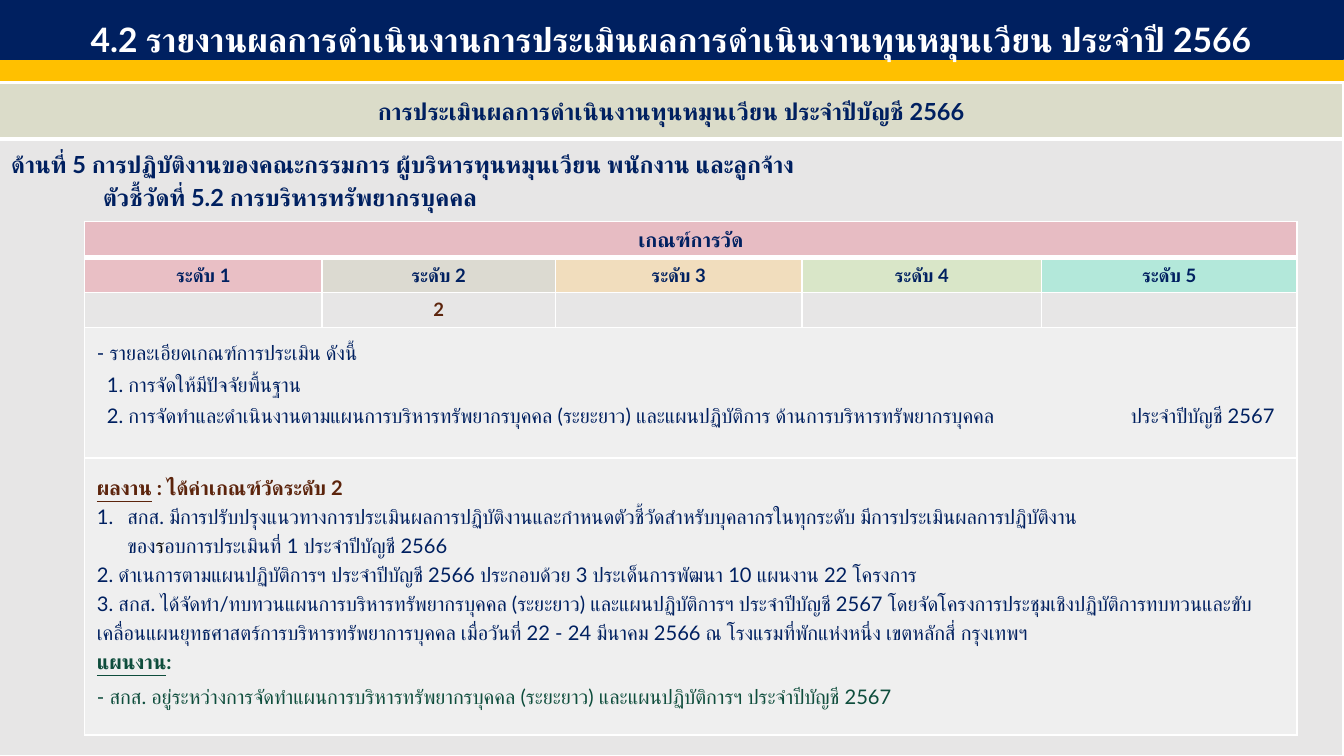
from lxml import etree
from pptx import Presentation
from pptx.dml.color import RGBColor
from pptx.enum import shapes, text
from pptx.oxml import ns
from pptx.util import Cm, Pt

FONT = "Lato"
NAVY = RGBColor(0x00, 0x20, 0x60)
GOLD = RGBColor(0xFF, 0xC0, 0x00)
WHITE = RGBColor(0xFF, 0xFF, 0xFF)
BLACK = RGBColor(0x00, 0x00, 0x00)
BROWN = RGBColor(0x5C, 0x24, 0x0C)
GREEN = RGBColor(0x0E, 0x4D, 0x3C)
SAGE = RGBColor(0xDB, 0xDC, 0xC9)
GREY = RGBColor(0xE7, 0xE6, 0xE6)
PALE = RGBColor(0xF2, 0xF2, 0xF2)
PINK = RGBColor(0xE8, 0xAB, 0xB5)
LEVEL_COLORS = [
    RGBColor(0xEB, 0xA5, 0xAF), RGBColor(0xD6, 0xD2, 0xC4), RGBColor(0xF9, 0xD8, 0xA3),
    RGBColor(0xD1, 0xE6, 0xB5), RGBColor(0x91, 0xEA, 0xD2),
]

TITLE = "4.2 รายงานผลการดำเนินงานการประเมินผลการดำเนินงานทุนหมุนเวียน ประจำปี 2566"
SUBTITLE = "การประเมินผลการดำเนินงานทุนหมุนเวียน ประจำปีบัญชี 2566"
ASPECT = "ด้านที่ 5 การปฏิบัติงานของคณะกรรมการ ผู้บริหารทุนหมุนเวียน พนักงาน และลูกจ้าง"
INDICATOR = "ตัวชี้วัดที่ 5.2 การบริหารทรัพยากรบุคคล"
CRITERIA_HEADING = "เกณฑ์การวัด"
LEVELS = [f"ระดับ {level}" for level in range(1, 6)]
SCORE = 2

# Each paragraph: its runs as (text, run format), then its paragraph format.
CRITERIA = [
    ([("- รายละเอียดเกณฑ์การประเมิน ดังนี้", {})], {"spacing": 1.3}),
    ([("1. การจัดให้มีปัจจัยพื้นฐาน", {})], {"spacing": 1.3, "left": 0.21}),
    ([("2. การจัดทำและดำเนินงานตามแผนการบริหารทรัพยากรบุคคล (ระยะยาว) และแผนปฏิบัติการ "
       "ด้านการบริหารทรัพยากรบุคคล\tประจำปีบัญชี 2567", {})],
     {"spacing": 1.3, "left": 0.21, "tab": 21.5}),
]
RESULTS = [
    ([("ผลงาน", {"color": BROWN, "bold": True, "underline": True}),
      (" : ได้ค่าเกณฑ์วัดระดับ 2", {"color": BROWN, "bold": True})], {"spacing": 1.5}),
    ([("สกส. มีการปรับปรุงแนวทางการประเมินผลการปฏิบัติงานและกำหนดตัวชี้วัดสำหรับบุคลากรในทุกระดับ "
       "มีการประเมินผลการปฏิบัติงาน\nของ", {}),
      ("ร", {"color": BLACK}),
      ("อบการประเมินที่ 1 ประจำปีบัญชี 2566", {})],
     {"spacing": 1.2, "left": 0.64, "numbered": True}),
    ([("2. ดำเนการตามแผนปฏิบัติการฯ ประจำปีบัญชี 2566 ประกอบด้วย 3 ประเด็นการพัฒนา "
       "10 แผนงาน 22 โครงการ", {})], {"spacing": 1.2}),
    ([("3. สกส. ได้จัดทำ/ทบทวนแผนการบริหารทรัพยากรบุคคล (ระยะยาว) และแผนปฏิบัติการฯ "
       "ประจำปีบัญชี 2567 โดยจัดโครงการประชุมเชิงปฏิบัติการทบทวนและขับเคลื่อนแผนยุทธศาสตร์"
       "การบริหารทรัพยาการบุคคล เมื่อวันที่ 22 - 24 มีนาคม 2566 ณ โรงแรมที่พักแห่งหนึ่ง "
       "เขตหลักสี่ กรุงเทพฯ", {})], {"spacing": 1.2}),
    ([("แผนงาน", {"color": GREEN, "bold": True, "underline": True}),
      (":", {"color": GREEN, "bold": True})], {"spacing": 1.2}),
    ([("- สกส. อยู่ระหว่างการจัดทำแผนการบริหารทรัพยากรบุคคล (ระยะยาว) และแผนปฏิบัติการฯ "
       "ประจำปีบัญชี 2567", {"color": GREEN})], {"before": 6}),
]

SLIDE_WIDTH, SLIDE_HEIGHT = 28.22, 15.88
FRAME_ROWS = [1.17, 12.95]
CRITERIA_COLUMNS = [4.98, 4.9, 5.18, 5.03, 5.36]
CRITERIA_ROWS = [0.74, 0.69, 0.74, 2.74, 5.82]


def add_xml(parent, tag, **attributes):
    return etree.SubElement(parent, ns.qn(tag), attributes)


def format_run(run, size, color=NAVY, bold=False, underline=False):
    font = run.font
    font.size, font.bold, font.name = Pt(size), bold, FONT
    font.color.rgb = color
    if underline:
        font.underline = True
    add_xml(font._element, "a:cs", typeface=FONT)


def write(frame, content, size=12, align=None, spacing=None, **run_format):
    """Fill a text frame with one string or with a list of (runs, paragraph format)."""
    if isinstance(content, str):
        content = [([(content, {})], {})]
    for index, (runs, layout) in enumerate(content):
        paragraph = frame.add_paragraph() if index else frame.paragraphs[0]
        properties = paragraph._p.get_or_add_pPr()
        if "left" in layout:
            properties.set("marL", str(Cm(layout["left"])))
        if "numbered" in layout:
            properties.set("indent", str(-Cm(layout["left"])))
            add_xml(properties, "a:buFont", typeface="+mj-lt")
            add_xml(properties, "a:buAutoNum", type="arabicPeriod")
        if "tab" in layout:
            tabs = add_xml(properties, "a:tabLst")
            add_xml(tabs, "a:tab", pos=str(Cm(layout["tab"])), algn="l")
        paragraph.alignment = align
        paragraph.line_spacing = layout.get("spacing", spacing)
        if "before" in layout:
            paragraph.space_before = Pt(layout["before"])
        if "after" in layout:
            paragraph.space_after = Pt(layout["after"])
        for words, own_format in runs:
            for number, line in enumerate(words.split("\n")):
                if number:
                    paragraph.add_line_break()
                run = paragraph.add_run()
                run.text = line
                format_run(run, size, **{**run_format, **own_format})


def add_bar(slide, left, top, width, height, color):
    bar = slide.shapes.add_shape(
        shapes.MSO_SHAPE.RECTANGLE, Cm(left), Cm(top), Cm(width), Cm(height))
    bar.shadow.inherit = False
    bar.fill.solid()
    bar.fill.fore_color.rgb = bar.line.color.rgb = color
    bar.line.width = Pt(1)
    return bar


def add_grid(slide, left, top, columns, rows):
    table = slide.shapes.add_table(
        len(rows), len(columns), Cm(left), Cm(top), Cm(sum(columns)), Cm(sum(rows))).table
    table.first_row = table.horz_banding = False
    for column, width in zip(table.columns, columns):
        column.width = Cm(width)
    for row, height in zip(table.rows, rows):
        row.height = Cm(height)
    return table


def style_cell(cell, color, opacity=100, top=1, bottom=1):
    """Set the fill and the white borders; top and bottom are widths in points."""
    cell.fill.solid()
    cell.fill.fore_color.rgb = color
    properties = cell._tc.get_or_add_tcPr()
    if opacity < 100:
        add_xml(properties.find(".//" + ns.qn("a:srgbClr")), "a:alpha", val=str(opacity * 1000))
    borders = {"a:lnL": 1, "a:lnR": 1, "a:lnT": top, "a:lnB": bottom}
    for index, (side, width) in enumerate(borders.items()):
        line = add_xml(properties, side, w=str(Pt(width)))
        add_xml(add_xml(line, "a:solidFill"), "a:srgbClr", val=str(WHITE))
        properties.insert(index, line)


def build_frame(slide):
    table = add_grid(slide, -0.02, 1.75, [SLIDE_WIDTH], FRAME_ROWS)
    heading, body = table.cell(0, 0), table.cell(1, 0)
    style_cell(heading, SAGE, bottom=3)
    style_cell(body, GREY, top=3)
    for cell in (heading, body):
        cell.margin_top = cell.margin_bottom = Cm(0.18)
    heading.vertical_anchor = text.MSO_ANCHOR.MIDDLE
    write(heading.text_frame, SUBTITLE, size=14, bold=True, align=text.PP_ALIGN.CENTER)
    write(body.text_frame, [
        ([(ASPECT, {})], {"after": 1}),
        ([(INDICATOR, {})], {"left": 1.93, "after": 0.5}),
    ], size=14, bold=True, spacing=1.1)


def build_criteria(slide):
    table = add_grid(slide, 1.78, 4.65, CRITERIA_COLUMNS, CRITERIA_ROWS)
    last = len(CRITERIA_COLUMNS) - 1
    centred = {"align": text.PP_ALIGN.CENTER, "bold": True}
    for column, (level, color) in enumerate(zip(LEVELS, LEVEL_COLORS)):
        style_cell(table.cell(0, column), PINK, 70, bottom=3)
        style_cell(table.cell(1, column), color, 60, top=3)
        style_cell(table.cell(2, column), GREY)
        style_cell(table.cell(3, column), PALE, 80)
        style_cell(table.cell(4, column), PALE, 80)
        write(table.cell(1, column).text_frame, level, size=11, **centred)
        score_frame = table.cell(2, column).text_frame
        if column + 1 == SCORE:
            write(score_frame, str(SCORE), size=11, color=BROWN, **centred)
        else:
            add_xml(score_frame.paragraphs[0]._p, "a:endParaRPr", sz="1100")
        for row in range(3):
            table.cell(row, column).vertical_anchor = text.MSO_ANCHOR.MIDDLE
    for row in (0, 3, 4):
        table.cell(row, 0).merge(table.cell(row, last))
    write(table.cell(0, 0).text_frame, CRITERIA_HEADING, **centred)
    write(table.cell(3, 0).text_frame, CRITERIA)
    write(table.cell(4, 0).text_frame, RESULTS)


def main():
    presentation = Presentation()
    presentation.slide_width, presentation.slide_height = Cm(SLIDE_WIDTH), Cm(SLIDE_HEIGHT)
    slide = presentation.slides.add_slide(presentation.slide_layouts[6])
    add_bar(slide, 0, 1.27, SLIDE_WIDTH, 0.41, GOLD)
    build_frame(slide)
    banner = add_bar(slide, -0.02, -0.05, SLIDE_WIDTH, 1.3, NAVY)
    banner.text_frame.word_wrap = True
    banner.text_frame.vertical_anchor = text.MSO_ANCHOR.MIDDLE
    write(banner.text_frame, TITLE, size=20, color=WHITE, bold=True,
          align=text.PP_ALIGN.CENTER, spacing=1.5)
    build_criteria(slide)
    presentation.save("out.pptx")


if __name__ == "__main__":
    main()
